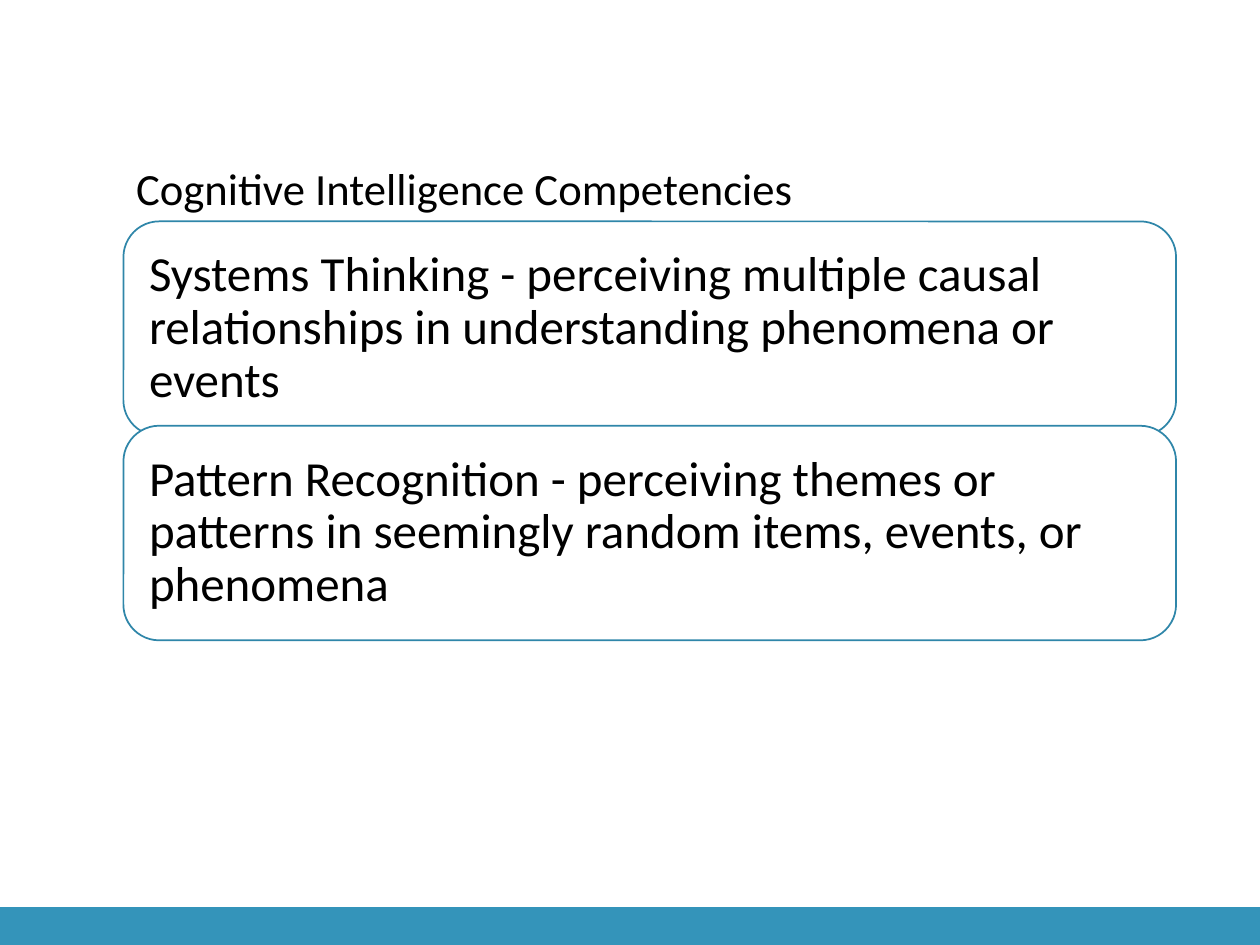
import dataclasses

import pptx
import pptx.dml.color
import pptx.enum.shapes
import pptx.enum.text
import pptx.util

Pt = pptx.util.Pt
Color = pptx.dml.color.RGBColor
Shape = pptx.enum.shapes.MSO_SHAPE
Anchor = pptx.enum.text.MSO_ANCHOR
Align = pptx.enum.text.PP_ALIGN


@dataclasses.dataclass(frozen=True)
class Theme:
    font: str = "Calibri"
    title_size: float = 25.5
    body_size: float = 28
    text: Color = Color(0x00, 0x00, 0x00)
    card: Color = Color(0xFF, 0xFF, 0xFF)
    outline: Color = Color(0x2F, 0x86, 0xA9)
    band: Color = Color(0x34, 0x94, 0xBA)


THEME = Theme()
PAGE_WIDTH, PAGE_HEIGHT = 720, 540
BAND_HEIGHT = 21.6
LEFT = 70.56
CARD_TOP, CARD_WIDTH, CARD_HEIGHT, CARD_STEP = 126.5, 601.5, 122.6, 116.8
CARD_INSET = 8.64
TITLE_WIDTH, TITLE_HEIGHT = 561.6, 41.76

TITLE = "Cognitive Intelligence Competencies"
COMPETENCIES = (
    "Systems Thinking - perceiving multiple causal relationships "
    "in understanding phenomena or events",
    "Pattern Recognition - perceiving themes or patterns "
    "in seemingly random items, events, or phenomena",
)


def write_text(box, text, size, anchor):
    frame = box.text_frame
    frame.word_wrap = True
    frame.auto_size = pptx.enum.text.MSO_AUTO_SIZE.NONE
    frame.vertical_anchor = anchor
    para = frame.paragraphs[0]
    para.alignment = Align.LEFT
    para.line_spacing = 0.9
    span = para.add_run()
    span.text = text
    span.font.name = THEME.font
    span.font.size = Pt(size)
    span.font.color.rgb = THEME.text


def add_box(page, kind, left, top, width, height, fill):
    box = page.shapes.add_shape(kind, Pt(left), Pt(top), Pt(width), Pt(height))
    box.shadow.inherit = False
    box.fill.solid()
    box.fill.fore_color.rgb = fill
    box.line.fill.background()
    return box


def add_band(page):
    add_box(page, Shape.RECTANGLE, 0, PAGE_HEIGHT - BAND_HEIGHT,
            PAGE_WIDTH, BAND_HEIGHT, THEME.band)


def set_title(page):
    box = page.shapes.title
    box.left, box.top = Pt(LEFT), Pt(CARD_TOP - TITLE_HEIGHT)
    box.width, box.height = Pt(TITLE_WIDTH), Pt(TITLE_HEIGHT)
    write_text(box, TITLE, THEME.title_size, Anchor.BOTTOM)


def add_card(page, top, text):
    box = add_box(page, Shape.ROUNDED_RECTANGLE, LEFT, top,
                  CARD_WIDTH, CARD_HEIGHT, THEME.card)
    box.line.color.rgb = THEME.outline
    box.line.width = Pt(1)
    frame = box.text_frame
    frame.margin_left = frame.margin_right = Pt(CARD_INSET)
    frame.margin_top = frame.margin_bottom = Pt(CARD_INSET)
    write_text(box, text, THEME.body_size, Anchor.MIDDLE)


def main():
    deck = pptx.Presentation()
    deck.slide_width, deck.slide_height = Pt(PAGE_WIDTH), Pt(PAGE_HEIGHT)
    page = deck.slides.add_slide(deck.slide_layouts.get_by_name("Title Only"))
    add_band(page)
    set_title(page)
    for index, text in enumerate(COMPETENCIES):
        add_card(page, CARD_TOP + index * CARD_STEP, text)
    deck.save("out.pptx")


if __name__ == "__main__":
    main()
